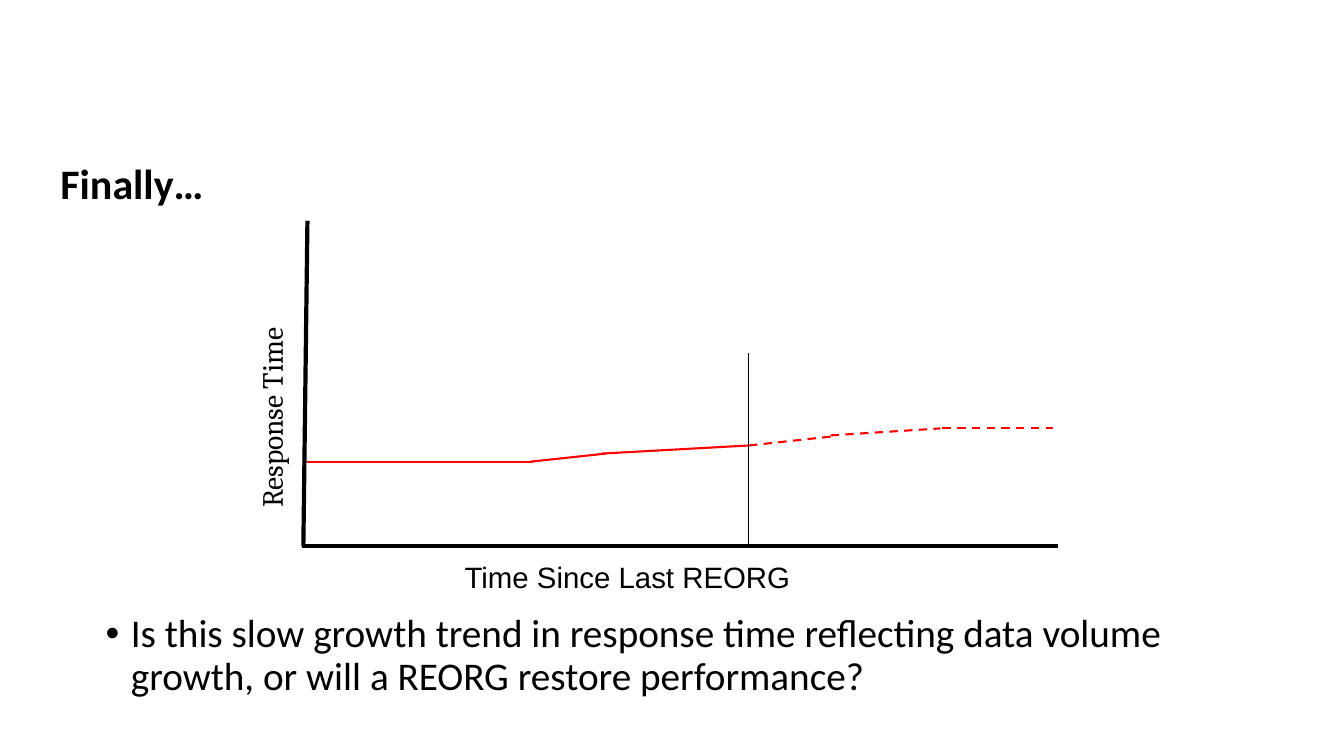
import pptx
import pptx.util
import pptx.dml.color
import pptx.enum.dml
import pptx.enum.shapes
import pptx.enum.text
from lxml import etree

Pt = pptx.util.Pt
Align = pptx.enum.text.PP_ALIGN
Dash = pptx.enum.dml.MSO_LINE

BLACK, RED = "000000", "FF0000"
TITLE = "Finally…"
POINT = ("Is this slow growth trend in response time reflecting data volume "
         "growth, or will a REORG restore performance?")
LABELS = [
    ("Time Since Last REORG", (314.6, 396, 267.1, 33.8), "Arial", 0),
    ("Response Time", (103, 281.5, 182.9, 33.8), "Cambria", 270),
]
AXES = [((219.6, 157.7), (216.7, 390.2)), ((756, 390.2), (216, 390.2))]
PAST = [
    ((219.6, 329.8), (380.9, 329.8)),
    ((378.7, 329.8), (432.7, 324)),
    ((429.8, 324), (535, 318.2)),
]
FUTURE = [
    ((535, 318.2), (594, 311.8)),
    ((593.3, 311), (671.8, 306)),
    ((673.2, 306), (752.4, 306)),
]
MARK = [((535, 390.2), (535, 252))]
LINES = [
    (AXES, BLACK, 3, None),
    (PAST, RED, 1.5, None),
    (FUTURE, RED, 1.5, Dash.DASH),
    (MARK, BLACK, 0.75, None),
]


def color(code):
    return pptx.dml.color.RGBColor.from_string(code)


def write(shape, text, face, size, align, bold=False):
    frame = shape.text_frame
    frame.word_wrap = True
    para = frame.paragraphs[0]
    para.text = text
    para.alignment = align
    para.font.name = face
    para.font.size = Pt(size)
    para.font.bold = bold
    para.font.color.rgb = color(BLACK)
    return para


def add_box(slide, box):
    return slide.shapes.add_textbox(*map(Pt, box))


def add_title(slide):
    title = slide.shapes.title
    title.left, title.top, title.width, title.height = map(
        Pt, (36, 101.5, 771.8, 62.6))
    para = write(title, TITLE, "Calibri", 30, Align.LEFT, True)
    para.line_spacing = 0.9
    title.text_frame.auto_size = pptx.enum.text.MSO_AUTO_SIZE.NONE
    title.text_frame.vertical_anchor = pptx.enum.text.MSO_ANCHOR.MIDDLE


def add_point(slide):
    box = add_box(slide, (68.4, 434.9, 828, 78.5))
    props = box.text_frame.paragraphs[0]._p.get_or_add_pPr()
    props.set("marL", str(Pt(18)))
    props.set("indent", str(-Pt(18)))
    space = pptx.oxml.ns.nsdecls("a")
    for tag in ('buFont %s typeface="Arial"', 'buChar %s char="•"'):
        props.append(pptx.oxml.parse_xml("<a:" + tag % space + "/>"))
    para = write(box, POINT, "Calibri", 28, Align.LEFT)
    para.line_spacing = 0.9


def add_line(slide, start, end, code, width, dash):
    kind = pptx.enum.shapes.MSO_CONNECTOR.STRAIGHT
    line = slide.shapes.add_connector(kind, *map(Pt, start + end))
    line.line.color.rgb = color(code)
    line.line.width = Pt(width)
    if dash:
        line.line.dash_style = dash
    etree.SubElement(line._element.spPr, pptx.oxml.ns.qn("a:effectLst"))


def main():
    deck = pptx.Presentation()
    deck.slide_width, deck.slide_height = Pt(960), Pt(540)
    slide = deck.slides.add_slide(deck.slide_layouts[5])
    add_title(slide)
    add_point(slide)
    for text, box, face, turn in LABELS:
        label = add_box(slide, box)
        label.rotation = turn
        write(label, text, face, 21, Align.CENTER)
    for group, code, width, dash in LINES:
        for start, end in group:
            add_line(slide, start, end, code, width, dash)
    deck.save("out.pptx")


if __name__ == "__main__":
    main()
